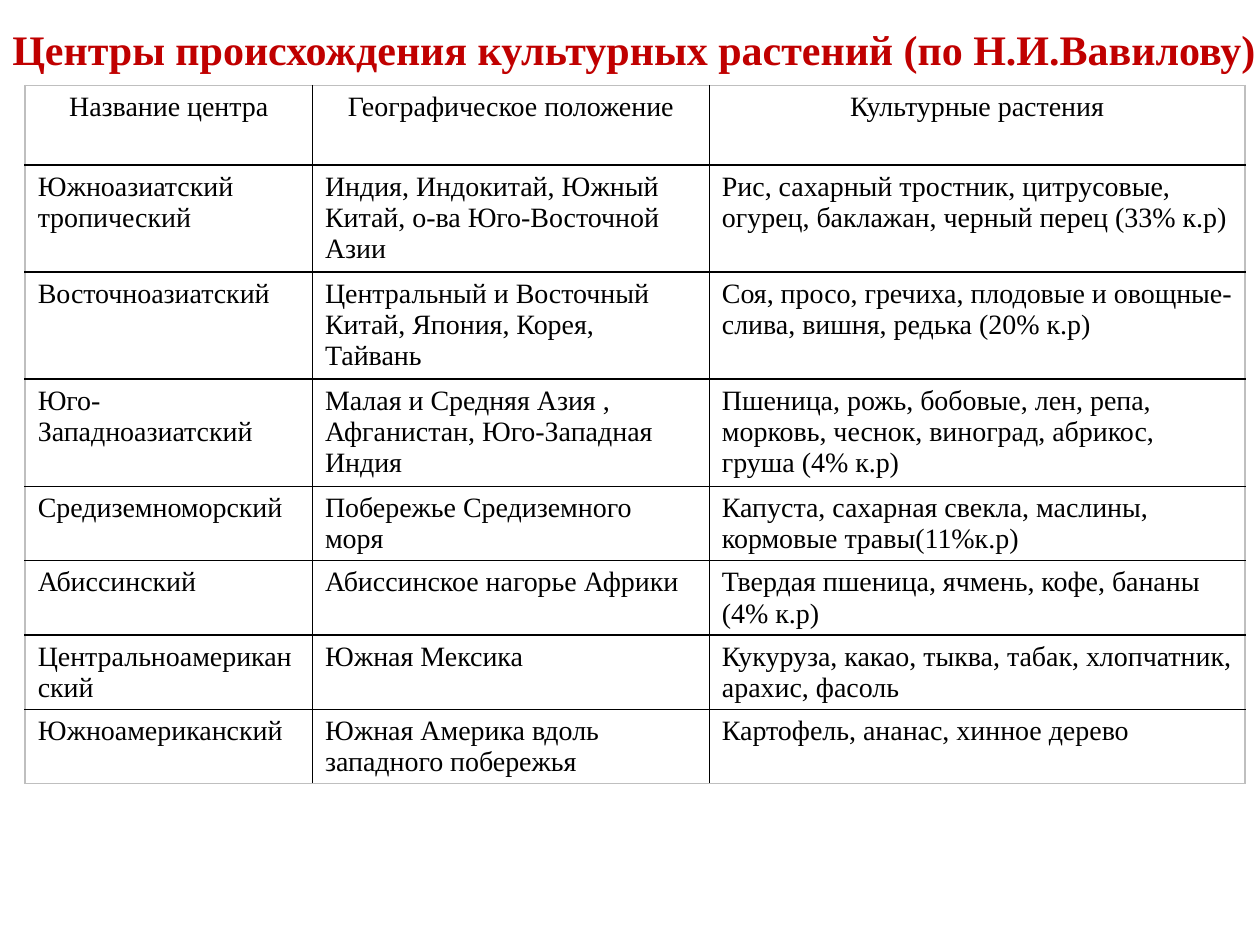
from lxml.etree import SubElement
from pptx import Presentation
from pptx.dml.color import RGBColor
from pptx.enum.text import MSO_ANCHOR, PP_ALIGN
from pptx.oxml.ns import qn
from pptx.util import Inches, Pt

RED = RGBColor(0xC0, 0x00, 0x00)
BLACK = RGBColor(0x00, 0x00, 0x00)
WHITE = RGBColor(0xFF, 0xFF, 0xFF)
GREY = RGBColor(0xBF, 0xBF, 0xBF)

TITLE = "Центры происхождения культурных растений (по Н.И.Вавилову)"
CENTRES = [
    ("Название центра", "Географическое положение", "Культурные растения"),
    ("Южноазиатский тропический",
     "Индия, Индокитай, Южный Китай, о-ва Юго-Восточной Азии",
     "Рис, сахарный тростник, цитрусовые, огурец, баклажан, черный перец (33% к.р)"),
    ("Восточноазиатский",
     "Центральный и Восточный Китай, Япония, Корея, Тайвань",
     "Соя, просо, гречиха, плодовые и овощные- слива, вишня, редька (20% к.р)"),
    ("Юго-Западноазиатский",
     "Малая и Средняя Азия , Афганистан, Юго-Западная Индия",
     "Пшеница, рожь, бобовые, лен, репа, морковь, чеснок, виноград, абрикос, груша (4% к.р)"),
    ("Средиземноморский",
     "Побережье Средиземного моря",
     "Капуста, сахарная свекла, маслины, кормовые травы(11%к.р)"),
    ("Абиссинский",
     "Абиссинское нагорье Африки",
     "Твердая пшеница, ячмень, кофе, бананы (4% к.р)"),
    ("Центральноамериканский",
     "Южная Мексика",
     "Кукуруза, какао, тыква, табак, хлопчатник, арахис, фасоль"),
    ("Южноамериканский",
     "Южная Америка вдоль западного побережья",
     "Картофель, ананас, хинное дерево"),
]
COLUMN_WIDTHS = [2.28, 3.15, 4.25]
# Header, three rows of three lines, four rows of two lines
ROW_HEIGHTS = [0.63] + [0.84] * 3 + [0.59] * 4


def write(frame, text, size=16, color=BLACK, bold=False, align=PP_ALIGN.LEFT,
          font="Times New Roman"):
    paragraph = frame.paragraphs[0]
    paragraph.alignment = align
    run = paragraph.add_run()
    run.text = text
    run.font.name = font
    run.font.size = Pt(size)
    run.font.bold = bold
    run.font.color.rgb = color


class SlideBuilder:
    def __init__(self, slide, inner=BLACK, outer=GREY, line_width=1):
        self.slide = slide
        self.inner = inner
        self.outer = outer
        self.line_width = line_width

    def title(self, text, left, top, width, height):
        box = self.slide.shapes.add_textbox(
            Inches(left), Inches(top), Inches(width), Inches(height))
        frame = box.text_frame
        frame.word_wrap = True
        frame.vertical_anchor = MSO_ANCHOR.MIDDLE
        write(frame, text, size=24, color=RED, bold=True)

    def border(self, cell, side, color):
        line = SubElement(cell._tc.get_or_add_tcPr(), qn(f"a:{side}"),
                          w=str(Pt(self.line_width)))
        fill = SubElement(line, qn("a:solidFill"))
        SubElement(fill, qn("a:srgbClr"), val=str(color))

    def table(self, rows, left, top, widths, heights):
        table = self.slide.shapes.add_table(
            len(rows), len(widths), Inches(left), Inches(top),
            Inches(sum(widths)), Inches(sum(heights))).table
        table.first_row = table.horz_banding = False
        for column, width in zip(table.columns, widths):
            column.width = Inches(width)
        for row, height in zip(table.rows, heights):
            row.height = Inches(height)

        last_row, last_column = len(rows) - 1, len(widths) - 1
        for r, texts in enumerate(rows):
            for c, text in enumerate(texts):
                cell = table.cell(r, c)
                cell.margin_bottom = Inches(0)
                write(cell.text_frame, text,
                      align=PP_ALIGN.LEFT if r else PP_ALIGN.CENTER)
                # Grey outer frame, black inner grid
                on_edge = {"lnL": c == 0, "lnR": c == last_column,
                           "lnT": r == 0, "lnB": r == last_row}
                for side, is_outer in on_edge.items():
                    self.border(cell, side, self.outer if is_outer else self.inner)
                cell.fill.solid()
                cell.fill.fore_color.rgb = WHITE


def main():
    presentation = Presentation()
    presentation.slide_width = Inches(10)
    presentation.slide_height = Inches(7.5)
    builder = SlideBuilder(
        presentation.slides.add_slide(presentation.slide_layouts[6]))

    # Heading
    builder.title(TITLE, 0, 0.12, 10.2, 0.54)

    # Centres of origin
    builder.table(CENTRES, 0.2, 0.68, COLUMN_WIDTHS, ROW_HEIGHTS)

    presentation.save("out.pptx")


if __name__ == "__main__":
    main()
